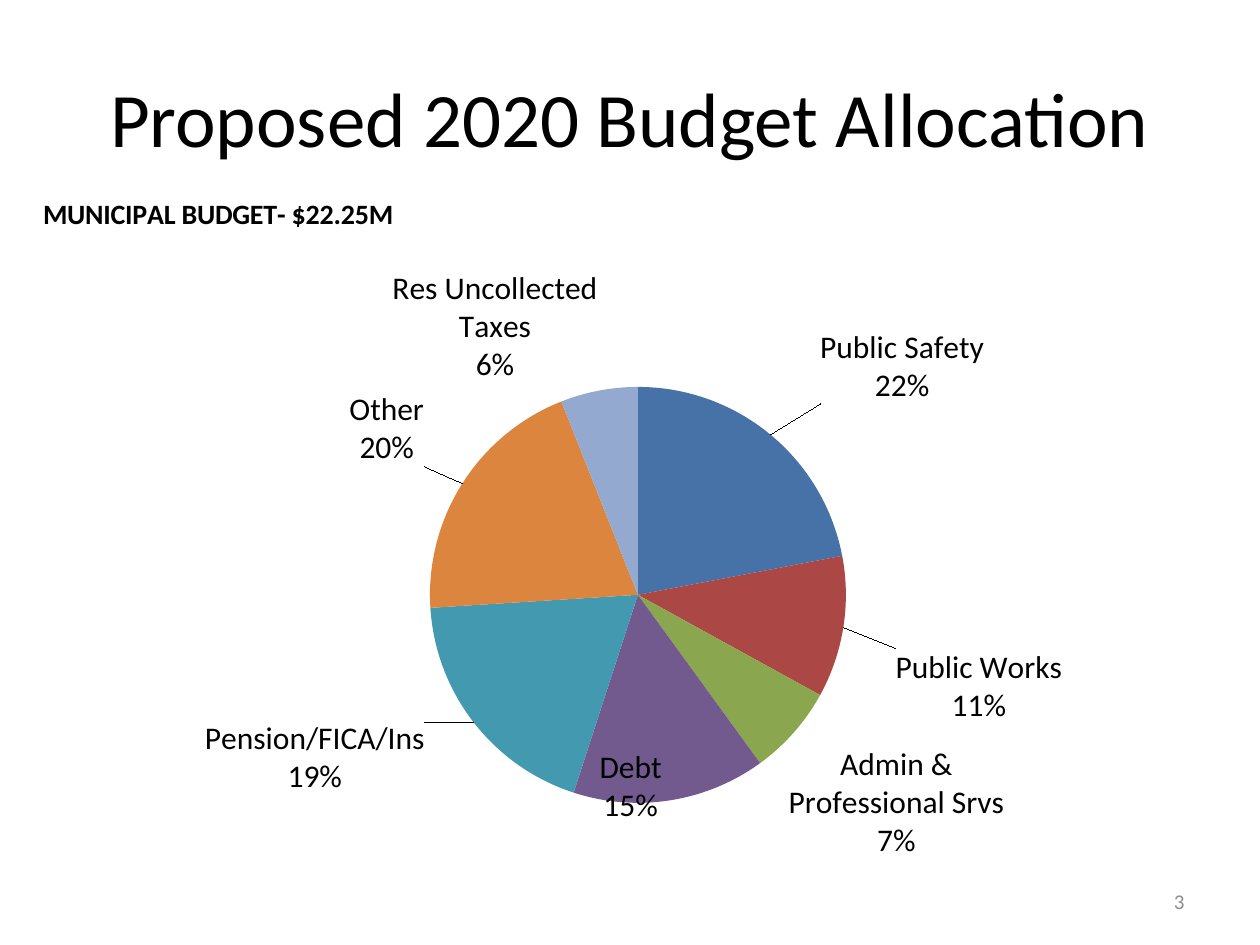
import pptx
import pptx.chart.data
import pptx.dml.color
import pptx.enum.chart
import pptx.enum.text
import pptx.oxml
import pptx.util

RGB = pptx.dml.color.RGBColor
ALIGN = pptx.enum.text.PP_ALIGN
PX = 914400 / 126
BLACK = RGB(0x00, 0x00, 0x00)
GRAY = RGB(0x8C, 0x8C, 0x8C)
NS = 'xmlns:c="http://schemas.openxmlformats.org/drawingml/2006/chart"'
CHART_W, CHART_H = 1197, 724


def px(*lengths):
    return [pptx.util.Emu(round(n * PX)) for n in lengths]


def add_layout(parent, index, x, y, w=None, h=None, edge=True):
    """Give a chart part a manual place, in px of the chart frame."""
    for old in parent.findall(pptx.oxml.ns.qn("c:layout")):
        parent.remove(old)
    parts = '<c:layoutTarget val="inner"/>' if w else ""
    if edge:
        parts += '<c:xMode val="edge"/><c:yMode val="edge"/>'
    sizes = (("x", x, CHART_W), ("y", y, CHART_H), ("w", w, CHART_W), ("h", h, CHART_H))
    for tag, n, full in sizes:
        if n is not None:
            parts += f'<c:{tag} val="{n / full:.4f}"/>'
    parent.insert(index, pptx.oxml.parse_xml(
        f"<c:layout {NS}><c:manualLayout>{parts}</c:manualLayout></c:layout>"))


prs = pptx.Presentation()
prs.slide_width, prs.slide_height = px(1260, 945)
s = prs.slides.add_slide(prs.slide_layouts[6])

# category, percent, slice colour, label shift from its outside-end place
SLICES = [
    ("Public Safety", 22, RGB(0x46, 0x72, 0xA8), (45, -25)),
    ("Public Works", 11, RGB(0xAB, 0x47, 0x44), (45, 20)),
    ("Admin & Professional Srvs", 7, RGB(0x8A, 0xA6, 0x4F), (-11, 8)),
    ("Debt", 15, RGB(0x72, 0x5A, 0x8F), (-72, -59)),
    ("Pension/FICA/Ins", 19, RGB(0x42, 0x99, 0xB0), (-43, -8)),
    ("Other", 20, RGB(0xDC, 0x85, 0x3F), (-32, -13)),
    ("Res Uncollected Taxes", 6, RGB(0x93, 0xA9, 0xCF), None),
]
data = pptx.chart.data.CategoryChartData()
data.categories = [row[0] for row in SLICES]
data.add_series("Series 1", [row[1] for row in SLICES])
chart = s.shapes.add_chart(pptx.enum.chart.XL_CHART_TYPE.PIE,
                           *px(32, 179, CHART_W, CHART_H), data).chart
chart.has_legend = False
chart.font.name = "Calibri"
chart.font.size = pptx.util.Pt(18)
chart.font.color.rgb = BLACK

chart.has_title = True
title = chart.chart_title
title.include_in_layout = False
r = title.text_frame.paragraphs[0].add_run()
r.text = "MUNICIPAL BUDGET- $22.25M"
for name, value in {"name": "Calibri", "size": pptx.util.Pt(16), "bold": True}.items():
    setattr(r.font, name, value)
r.font.color.rgb = BLACK
add_layout(title._element, 1, 6, 11)

plot = chart.plots[0]
plot.vary_by_categories = True
add_layout(plot._element.getparent(), 0, 398, 208, 416, 416)

series = plot.series[0]
SHOW = "".join(f'<c:show{name} val="{on}"/>' for name, on in (
    ("LegendKey", 0), ("Val", 0), ("CatName", 1), ("SerName", 0),
    ("Percent", 1), ("BubbleSize", 0)))
FORMAT = f'<c:dLblPos val="outEnd"/>{SHOW}<c:separator>\n</c:separator>'
labels = pptx.oxml.parse_xml(
    f'<c:dLbls {NS}>{FORMAT}<c:showLeaderLines val="1"/></c:dLbls>')
for i, (category, percent, color, shift) in enumerate(SLICES):
    fill = series.points[i].format.fill
    fill.solid()
    fill.fore_color.rgb = color
    if shift:
        label = pptx.oxml.parse_xml(f'<c:dLbl {NS}><c:idx val="{i}"/>{FORMAT}</c:dLbl>')
        add_layout(label, 1, *shift, edge=False)
        labels.insert(i, label)
for old in series._element.findall(pptx.oxml.ns.qn("c:dLbls")):
    series._element.remove(old)
series._element.find(pptx.oxml.ns.qn("c:cat")).addprevious(labels)

TEXTS = [
    ("3", (903, 876, 294, 50), 12, GRAY, ALIGN.RIGHT),
    ("Proposed 2020 Budget Allocation", (63, 38, 1134, 158), 44, BLACK, ALIGN.CENTER),
]
for text, box, size, color, align in TEXTS:
    tf = s.shapes.add_textbox(*px(*box)).text_frame
    tf.word_wrap = True
    tf.vertical_anchor = pptx.enum.text.MSO_ANCHOR.MIDDLE
    p = tf.paragraphs[0]
    p.alignment = align
    r = p.add_run()
    r.text = text
    for name, value in {"name": "Calibri", "size": pptx.util.Pt(size)}.items():
        setattr(r.font, name, value)
    r.font.color.rgb = color

prs.save("out.pptx")
